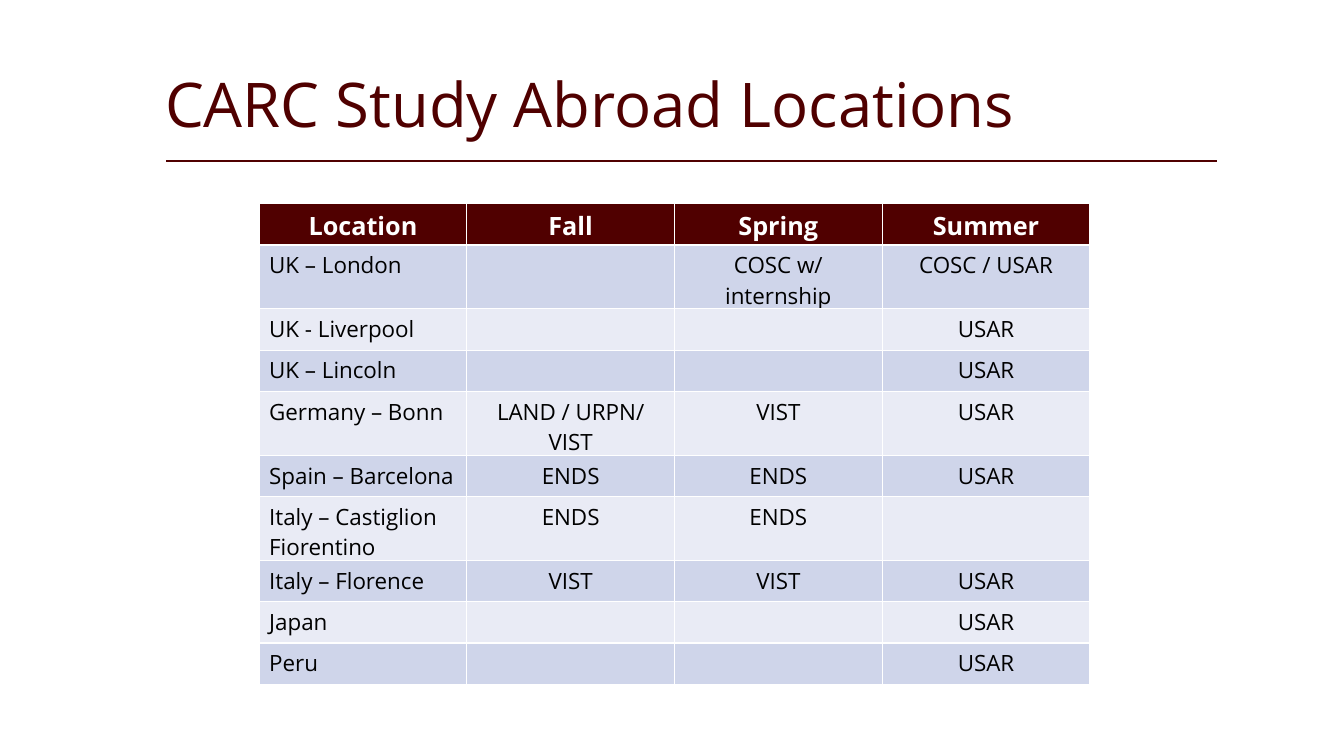
from pptx import Presentation
from pptx import util as u
from pptx.dml.color import RGBColor
from pptx.enum import shapes, text
from pptx.oxml.ns import qn
from lxml import etree

FONT = "Open Sans"
HUES = {"maroon": "500000", "white": "FFFFFF", "black": "000000",
        "odd": "CFD5EA", "even": "E9EBF5"}
HEADS = ["Location", "Fall", "Spring", "Summer"]
PLACES = [
    ["UK – London", "", "COSC w/ internship", "COSC / USAR"],
    ["UK - Liverpool", "", "", "USAR"],
    ["UK – Lincoln", "", "", "USAR"],
    ["Germany – Bonn", "LAND / URPN/ VIST", "VIST", "USAR"],
    ["Spain – Barcelona", "ENDS", "ENDS", "USAR"],
    ["Italy – Castiglion Fiorentino", "ENDS", "ENDS", ""],
    ["Italy – Florence", "VIST", "VIST", "USAR"],
    ["Japan", "", "", "USAR"],
    ["Peru", "", "", "USAR"],
]


def px(n):
    """Turn px, at 100 to the inch, into EMU."""
    return u.Emu(n * 9144)


def hue(name):
    return RGBColor.from_string(HUES[name])


def style(para, size, color, bold=False):
    font = para.font
    font.name, font.size, font.bold = FONT, u.Pt(size), bold
    font.color.rgb = hue(color)


def add_title(slide, words):
    frame = slide.shapes.add_textbox(px(154), px(34), px(1150), px(145)).text_frame
    frame.word_wrap = True
    frame.vertical_anchor = text.MSO_ANCHOR.MIDDLE
    para = frame.paragraphs[0]
    para.text = words
    para.line_spacing = 0.9
    style(para, 44, "maroon")


def add_rule(slide, left, right, y):
    rule = slide.shapes.add_connector(
        shapes.MSO_CONNECTOR.STRAIGHT, px(left), px(y), px(right), px(y))
    rule.line.color.rgb = hue("maroon")
    rule.line.width = u.Pt(1.5)
    etree.SubElement(rule._element.spPr, qn("a:effectLst"))


def fill_cell(cell, words, back, size, color, bold, center):
    cell.fill.solid()
    cell.fill.fore_color.rgb = hue(back)
    para = cell.text_frame.paragraphs[0]
    para.text = words
    if center:
        para.alignment = text.PP_ALIGN.CENTER
    style(para, size, color, bold)


def add_grid(slide, rows):
    """Add the table; its default style draws the white cell borders."""
    count, wide = len(rows), len(rows[0])
    grid = slide.shapes.add_table(
        count, wide, px(257), px(202), px(206 * wide), px(41 * count)).table
    for r, row in enumerate(rows):
        head = r == 0
        back = "maroon" if head else "odd" if r % 2 else "even"
        size, color = (18, "white") if head else (16, "black")
        for c, words in enumerate(row):
            fill_cell(grid.cell(r, c), words, back, size, color,
                      head, head or c > 0)


def main():
    deck = Presentation()
    deck.slide_width, deck.slide_height = px(1333), px(750)
    slide = deck.slides.add_slide(deck.slide_layouts[6])
    add_rule(slide, 165, 1207, 160)
    add_title(slide, "CARC Study Abroad Locations")
    add_grid(slide, [HEADS] + PLACES)
    deck.save("out.pptx")


if __name__ == "__main__":
    main()
